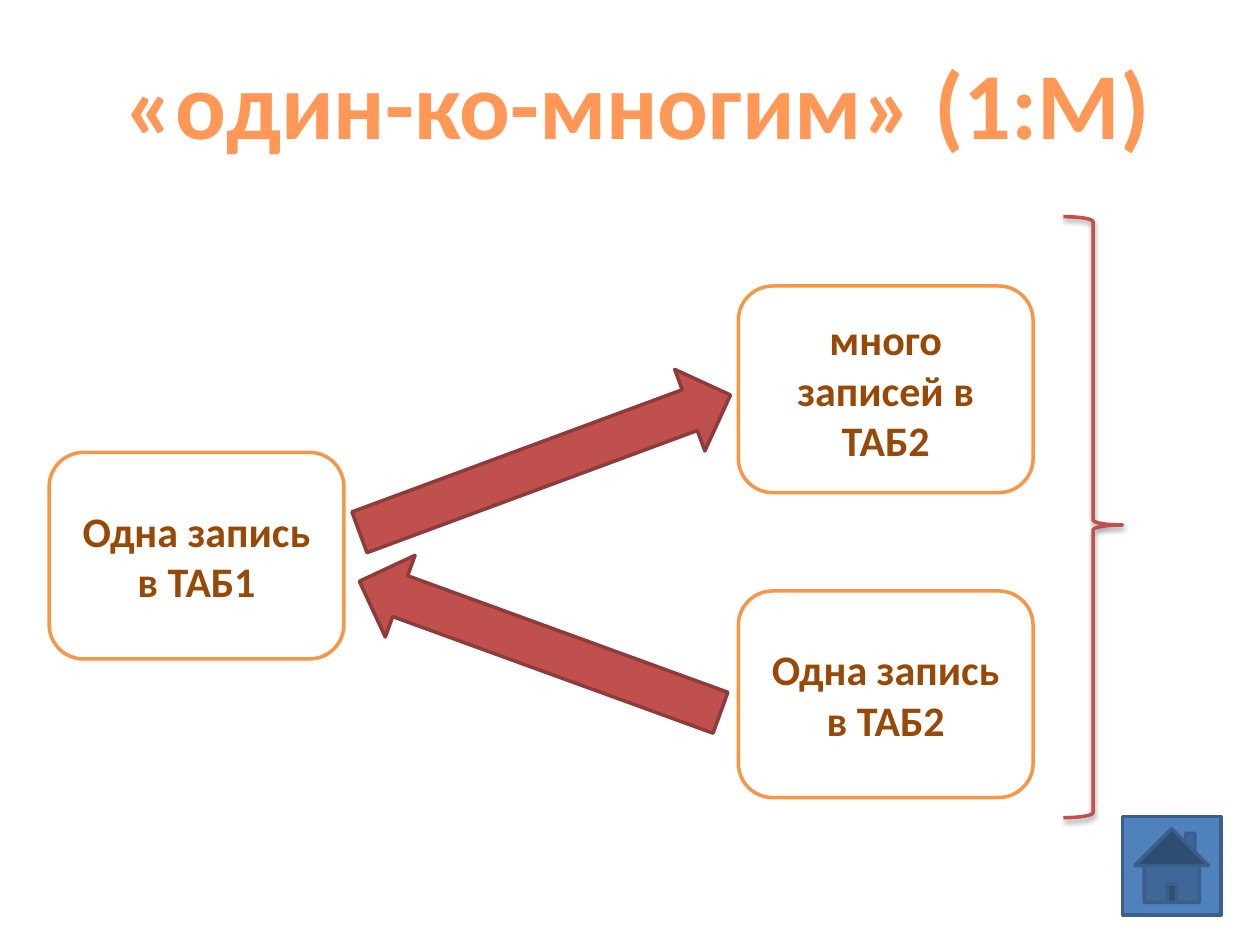
from lxml import etree
from pptx import Presentation
from pptx import util as u
from pptx.dml.color import RGBColor
from pptx.enum import shapes, text
from pptx.oxml.ns import qn

COLORS = {
    "title": "FF9856", "white": "FFFFFF", "orange": "F79646", "brown": "984807",
    "red": "C0504D", "dark_red": "8E3B39", "blue": "4F81BD", "dark_blue": "3A5F8C",
    "shadow": "000000",
}
KIND = shapes.MSO_SHAPE
RECORD_SIZE = (2.34, 1.64)


def color(name):
    return RGBColor.from_string(COLORS[name])


def write(frame, words, size, color_name):
    para = frame.paragraphs[0]
    para.alignment = text.PP_ALIGN.CENTER
    span = para.add_run()
    span.text = words
    span.font.color.rgb = color(color_name)
    font_format = {"name": "Calibri", "size": u.Pt(size), "bold": True}
    for key, value in font_format.items():
        setattr(span.font, key, value)


def add_shape(page, kind, box, fill, line, rotation=0):
    shape = page.shapes.add_shape(kind, *map(u.Inches, box))
    shape.shadow.inherit = False
    shape.rotation = rotation
    if fill:
        shape.fill.solid()
        shape.fill.fore_color.rgb = color(fill)
    else:
        shape.fill.background()
    shape.line.color.rgb = color(line)
    shape.line.width = u.Pt(2)
    return shape


def add_title(page, box, words):
    title = page.shapes.add_textbox(*map(u.Inches, box))
    frame = title.text_frame
    frame.word_wrap = False
    frame.auto_size = text.MSO_AUTO_SIZE.SHAPE_TO_FIT_TEXT
    write(frame, words, 54, "title")


def add_record(page, box, words):
    record = add_shape(page, KIND.ROUNDED_RECTANGLE, box, "white", "orange")
    frame = record.text_frame
    frame.word_wrap = True
    frame.vertical_anchor = text.MSO_ANCHOR.MIDDLE
    write(frame, words, 24, "brown")


def add_brace(page, box):
    brace = add_shape(page, KIND.RIGHT_BRACE, box, None, "red")
    brace.adjustments[0] = 0.083
    brace.adjustments[1] = 0.513
    # Soft shadow straight below
    effects = brace.element.spPr.find(qn("a:effectLst"))
    shadow = etree.SubElement(effects, qn("a:outerShdw"), blurRad=str(u.Pt(3.1)),
                              dist=str(u.Pt(1.6)), dir="5400000", rotWithShape="0")
    tint = etree.SubElement(shadow, qn("a:srgbClr"), val=COLORS["shadow"])
    etree.SubElement(tint, qn("a:alpha"), val="38000")


def add_diagram(page, box):
    left, top, width, height = box
    right = left + 5.47

    # Records of the two tables
    for x, y, words in (
        (left, top + 1.87, "Одна запись в ТАБ1"),
        (right, top + 0.55, "много записей в ТАБ2"),
        (right, top + 2.97, "Одна запись в ТАБ2"),
    ):
        add_record(page, (x, y, *RECORD_SIZE), words)

    # Arrows there and back
    for x, y, length, rotation in ((3.59, 0.39, 3.14, 69.7), (3.55, 1.89, 3.05, 290)):
        add_shape(page, KIND.UP_ARROW, (left + x, top + y, 0.69, length),
                  "red", "dark_red", rotation)

    # Brace along the right edge
    brace_width = 0.47
    add_brace(page, (left + width - brace_width, top, brace_width, height))


def add_home_button(page, box):
    add_shape(page, KIND.ACTION_BUTTON_HOME, box, "blue", "dark_blue")


def main():
    deck = Presentation()
    deck.slide_width, deck.slide_height = u.Inches(10), u.Inches(7.5)
    page = deck.slides.add_slide(deck.slide_layouts[6])
    add_title(page, (0.86, 0.31, 8.4, 1.01), "«один-ко-многим» (1:М)")
    add_diagram(page, (0.39, 1.72, 8.52, 4.77))
    add_home_button(page, (8.91, 6.48, 0.78, 0.78))
    deck.save("out.pptx")


if __name__ == "__main__":
    main()
